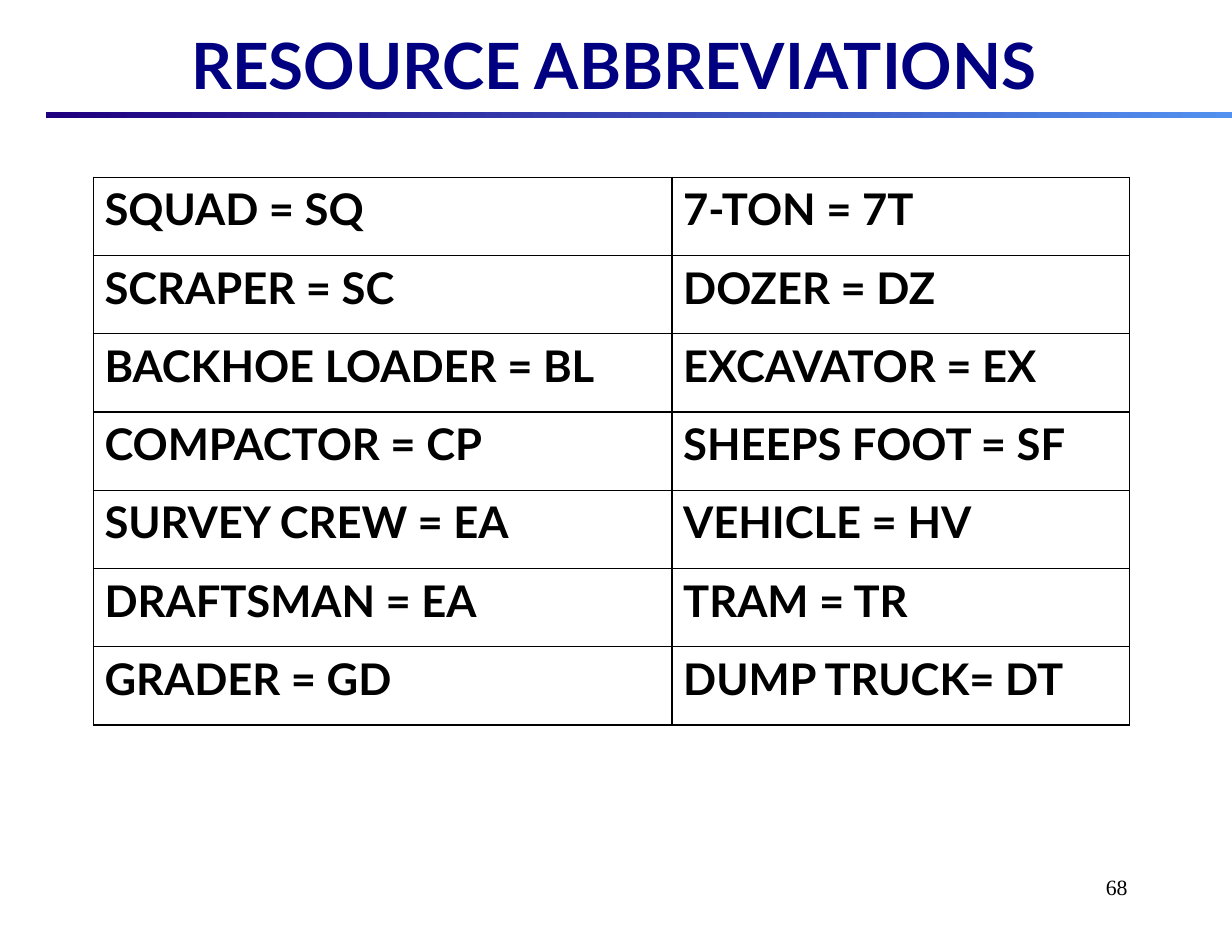
from dataclasses import dataclass

from lxml import etree
from pptx import Presentation
from pptx.dml.color import RGBColor
from pptx.enum.shapes import MSO_SHAPE
from pptx.enum.text import MSO_ANCHOR, MSO_AUTO_SIZE, PP_ALIGN
from pptx.oxml.ns import qn
from pptx.util import Pt

CENTER, RIGHT = PP_ALIGN.CENTER, PP_ALIGN.RIGHT
BOTTOM = MSO_ANCHOR.BOTTOM
NO_FIT = MSO_AUTO_SIZE.NONE
RECTANGLE = MSO_SHAPE.RECTANGLE

TITLE_ONLY = 5
BLACK, NAVY = "000000", "000080"
RULE_START, RULE_END = "1F007F", "5291EF"
COLUMN_WIDTHS = (372, 294)
ROW_HEIGHT = 50.3
BORDER_WIDTH = 1


@dataclass(frozen=True)
class Box:
    left: float
    top: float
    width: float
    height: float

    def lengths(self) -> tuple:
        return Pt(self.left), Pt(self.top), Pt(self.width), Pt(self.height)


@dataclass(frozen=True)
class Style:
    font: str
    size: float
    color: str = BLACK
    bold: bool = False


@dataclass(frozen=True)
class Resource:
    name: str
    code: str
    equals: str = " = "

    def label(self) -> str:
        return self.name + self.equals + self.code


TITLE_STYLE = Style("Lato", 41, NAVY, True)
RESOURCE_STYLE = Style("Lato", 28, BLACK, True)
NUMBER_STYLE = Style("Times New Roman", 14)

RESOURCE_ROWS = (
    (Resource("SQUAD", "SQ"), Resource("7-TON", "7T")),
    (Resource("SCRAPER", "SC"), Resource("DOZER", "DZ")),
    (Resource("BACKHOE LOADER", "BL"), Resource("EXCAVATOR", "EX")),
    (Resource("COMPACTOR", "CP"), Resource("SHEEPS FOOT", "SF")),
    (Resource("SURVEY CREW", "EA"), Resource("VEHICLE", "HV")),
    (Resource("DRAFTSMAN", "EA"), Resource("TRAM", "TR")),
    (Resource("GRADER", "GD"), Resource("DUMP TRUCK", "DT", "= ")),
)


def rgb(value: str) -> RGBColor:
    return RGBColor.from_string(value)


def write(frame, text: str, style: Style, align=None) -> None:
    frame.text = text
    paragraph = frame.paragraphs[0]
    paragraph.alignment = align
    font = paragraph.font
    font.name, font.size, font.bold = style.font, Pt(style.size), style.bold
    font.color.rgb = rgb(style.color)


def add_title(slide, text: str, box: Box) -> None:
    title = slide.shapes.title
    title.left, title.top, title.width, title.height = box.lengths()
    frame = title.text_frame
    frame.auto_size, frame.word_wrap = NO_FIT, True
    frame.vertical_anchor = BOTTOM
    frame.margin_left = frame.margin_right = 0
    frame.margin_top = frame.margin_bottom = 0
    write(frame, text, TITLE_STYLE, CENTER)


def add_title_rule(slide, box: Box) -> None:
    rule = slide.shapes.add_shape(RECTANGLE, *box.lengths())
    rule.shadow.inherit = False
    rule.line.fill.background()
    rule.fill.gradient()
    rule.fill.gradient_angle = 0
    for stop, color in zip(rule.fill.gradient_stops, (RULE_START, RULE_END)):
        stop.color.rgb = rgb(color)


def add_borders(cell) -> None:
    properties = cell._tc.get_or_add_tcPr()
    for position, side in enumerate(("a:lnL", "a:lnR", "a:lnT", "a:lnB")):
        line = etree.Element(qn(side), w=str(Pt(BORDER_WIDTH)))
        fill = etree.SubElement(line, qn("a:solidFill"))
        etree.SubElement(fill, qn("a:srgbClr"), val=BLACK)
        properties.insert(position, line)


def add_resource_table(slide, left: float, top: float) -> None:
    box = Box(left, top, sum(COLUMN_WIDTHS), ROW_HEIGHT * len(RESOURCE_ROWS))
    table = slide.shapes.add_table(
        len(RESOURCE_ROWS), len(COLUMN_WIDTHS), *box.lengths()
    ).table
    table.first_row = table.horz_banding = False
    for column, width in zip(table.columns, COLUMN_WIDTHS):
        column.width = Pt(width)
    for row, resources in zip(table.rows, RESOURCE_ROWS):
        row.height = Pt(ROW_HEIGHT)
        for cell, resource in zip(row.cells, resources):
            cell.fill.background()
            add_borders(cell)
            write(cell.text_frame, resource.label(), RESOURCE_STYLE)


def add_page_number(slide, number: str, box: Box) -> None:
    frame = slide.shapes.add_textbox(*box.lengths()).text_frame
    frame.word_wrap = True
    write(frame, number, NUMBER_STYLE, RIGHT)


def main() -> None:
    deck = Presentation()
    deck.slide_width, deck.slide_height = Pt(792), Pt(612)
    slide = deck.slides.add_slide(deck.slide_layouts[TITLE_ONLY])
    add_page_number(slide, "68", Box(570, 558, 162, 42))
    add_title_rule(slide, Box(29.5, 72, 762.5, 3.8))
    add_title(slide, "RESOURCE ABBREVIATIONS", Box(-6, 0, 802, 66))
    add_resource_table(slide, 60, 114)
    deck.save("out.pptx")


if __name__ == "__main__":
    main()
